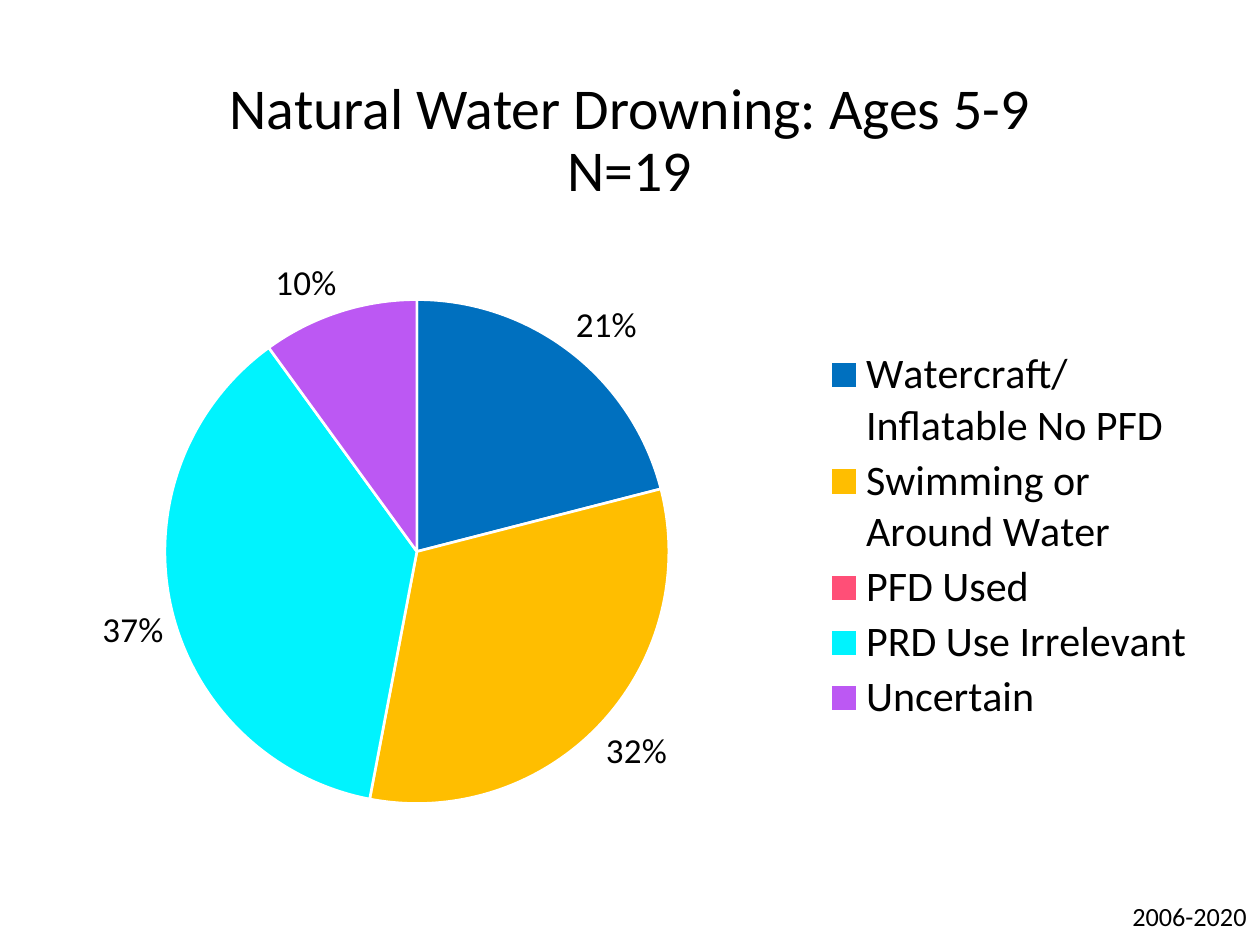
import pptx
import pptx.chart.data
import pptx.dml.color
import pptx.enum.chart
import pptx.enum.text
import pptx.oxml
import pptx.oxml.ns
import pptx.util
from pptx.util import Cm

FONT = "Calibri"
COLORS = {
    "text": "000000",
    "background": "FFFFFF",
    "Watercraft/Inflatable No PFD": "0070BF",
    "Swimming or Around Water": "FFBE00",
    "PFD Used": "FF4F77",
    "PRD Use Irrelevant": "00F3FE",
    "Uncertain": "BC58F3",
}
SHARES = {
    "Watercraft/Inflatable No PFD": 21,
    "Swimming or Around Water": 32,
    "PFD Used": 0,
    "PRD Use Irrelevant": 37,
    "Uncertain": 10,
}


def rgb(name):
    return pptx.dml.color.RGBColor.from_string(COLORS[name])


def style_font(font, size):
    font.name = FONT
    font.size = pptx.util.Pt(size)
    font.bold = False
    font.color.rgb = rgb("text")


def style_text(tf, size):
    for p in tf.paragraphs:
        p.alignment = pptx.enum.text.PP_ALIGN.CENTER
        for r in p.runs:
            style_font(r.font, size)


def set_layout(parent, position, x, y, w, h, inner=False):
    target = '<c:layoutTarget val="inner"/>' if inner else ""
    layout = pptx.oxml.parse_xml(
        f'<c:layout {pptx.oxml.ns.nsdecls("c")}><c:manualLayout>{target}'
        '<c:xMode val="edge"/><c:yMode val="edge"/>'
        f'<c:x val="{x}"/><c:y val="{y}"/><c:w val="{w}"/><c:h val="{h}"/>'
        "</c:manualLayout></c:layout>"
    )
    for old in parent.findall(pptx.oxml.ns.qn("c:layout")):
        parent.remove(old)
    parent.insert(position, layout)


def hide_label(labels, idx):
    labels._element.insert(0, pptx.oxml.parse_xml(
        f'<c:dLbl {pptx.oxml.ns.nsdecls("c")}>'
        f'<c:idx val="{idx}"/><c:delete val="1"/></c:dLbl>'
    ))


def add_title(s, left, top, width, height):
    sp = s.shapes.title
    sp.left, sp.top, sp.width, sp.height = left, top, width, height
    tf = sp.text_frame
    tf.text = "Natural Water Drowning: Ages 5-9\vN=19"
    tf.vertical_anchor = pptx.enum.text.MSO_ANCHOR.MIDDLE
    tf.paragraphs[0].line_spacing = 0.9
    style_text(tf, 33)


def add_pie(s, left, top, width, height):
    data = pptx.chart.data.CategoryChartData()
    data.categories = list(SHARES)
    data.add_series("Series 1", list(SHARES.values()))
    chart = s.shapes.add_chart(
        pptx.enum.chart.XL_CHART_TYPE.PIE, left, top, width, height, data
    ).chart
    style_font(chart.font, 10)
    chart.has_title = False

    chart.has_legend = True
    legend = chart.legend
    legend.position = pptx.enum.chart.XL_LEGEND_POSITION.RIGHT
    legend.include_in_layout = False
    style_font(legend.font, 24)
    set_layout(legend._element, 1, 0.68, 0.18, 0.3, 0.64)

    plot = chart.plots[0]
    plot.vary_by_categories = True
    set_layout(plot._element.getparent(), 0, 0.16, 0.1, 0.4, 0.85, inner=True)

    series = plot.series[0]
    labels = series.data_labels
    labels.show_value = False
    labels.show_percentage = True
    labels.number_format = "0%"
    labels.number_format_is_linked = False
    labels.position = pptx.enum.chart.XL_LABEL_POSITION.OUTSIDE_END
    style_font(labels.font, 20)

    for i, (name, share) in enumerate(SHARES.items()):
        fmt = series.points[i].format
        fmt.fill.solid()
        fmt.fill.fore_color.rgb = rgb(name)
        fmt.line.color.rgb = rgb("background")
        fmt.line.width = pptx.util.Pt(1.5)
        if share == 0:
            hide_label(labels, i)


def add_period(s, left, top, width, height):
    tf = s.shapes.add_textbox(left, top, width, height).text_frame
    tf.text = "2006-2020"
    tf.word_wrap = False
    tf.auto_size = pptx.enum.text.MSO_AUTO_SIZE.SHAPE_TO_FIT_TEXT
    style_text(tf, 15)


def main():
    prs = pptx.Presentation()
    prs.slide_width, prs.slide_height = Cm(25.4), Cm(19.05)
    s = prs.slides.add_slide(prs.slide_layouts[5])
    s.background.fill.solid()
    s.background.fill.fore_color.rgb = rgb("background")
    add_title(s, Cm(1.75), Cm(1.02), Cm(21.9), Cm(3.68))
    add_pie(s, Cm(-0.74), Cm(4.8), Cm(25.4), Cm(12.04))
    add_period(s, Cm(22.56), Cm(18.03), Cm(2.84), Cm(0.89))
    prs.save("out.pptx")


if __name__ == "__main__":
    main()
